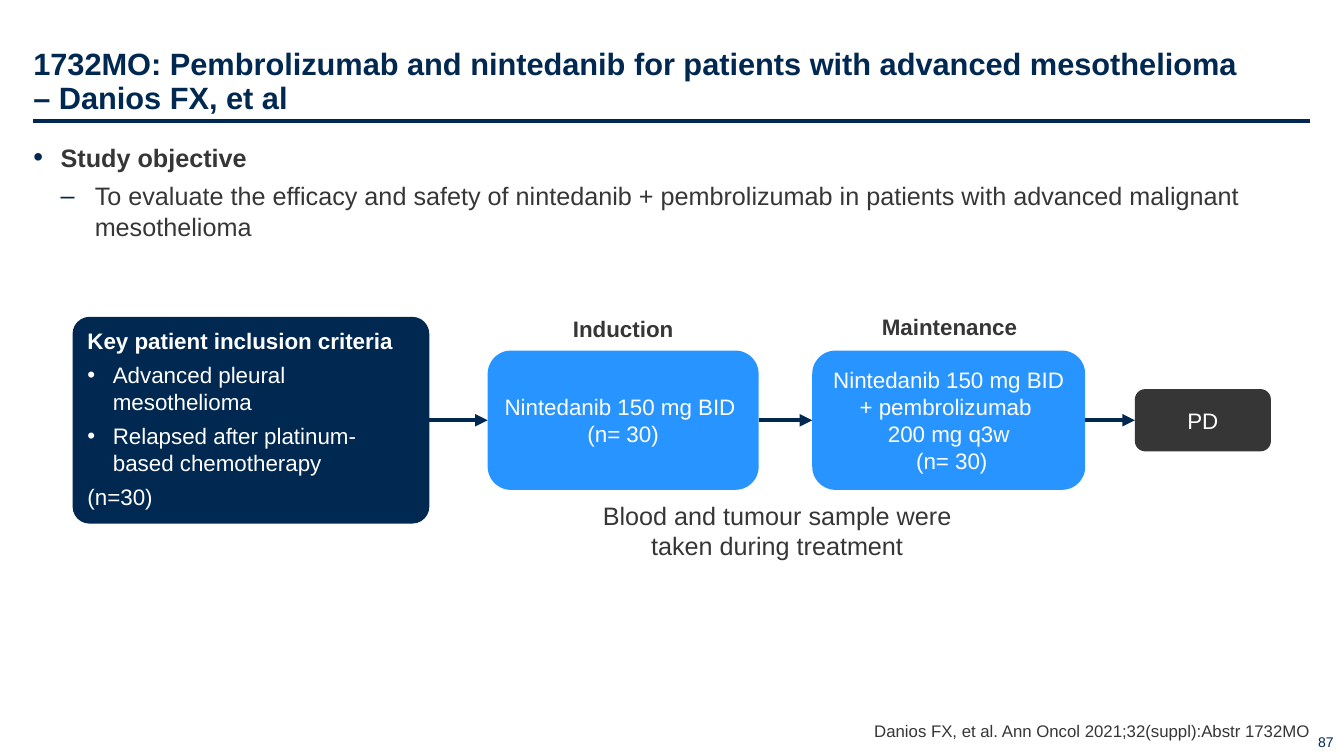
from lxml.etree import SubElement
from pptx import Presentation
from pptx.dml.color import RGBColor
from pptx.enum.shapes import MSO_CONNECTOR, MSO_SHAPE
from pptx.enum.text import MSO_ANCHOR, PP_ALIGN
from pptx.oxml.ns import qn
from pptx.util import Cm, Pt

NAVY, BLUE, GREY, WHITE = "002850", "2894FF", "363636", "FFFFFF"
FLOW_Y = 10.59
LEFT, RIGHT = 0.84, 33.02


def rgb(color):
    return RGBColor.from_string(color)


def setup_frame(tf, anchor, insets, wrap=True):
    tf.word_wrap = wrap
    tf.vertical_anchor = anchor
    left, top, right, bottom = (Cm(n) for n in insets)
    tf.margin_left, tf.margin_top = left, top
    tf.margin_right, tf.margin_bottom = right, bottom


def write_paragraph(p, text, size, color, bold=False, align=PP_ALIGN.LEFT, after=0):
    p.text = text
    p.alignment = align
    p.space_after = Pt(after)
    for r in p.runs:
        r.font.name = "Arial"
        r.font.size = Pt(size)
        r.font.bold = bold
        r.font.color.rgb = rgb(color)


def indent(p, margin, hanging, bullet=None, color=WHITE, percent=100):
    """Give a paragraph a hanging indent and, if named, a bullet."""
    pPr = p._p.get_or_add_pPr()
    pPr.set("marL", str(Cm(margin)))
    pPr.set("indent", str(-Cm(hanging)))
    if bullet:
        SubElement(SubElement(pPr, qn("a:buClr")), qn("a:srgbClr"), val=color)
        SubElement(pPr, qn("a:buSzPct"), val=str(percent * 1000))
        SubElement(pPr, qn("a:buFont"), typeface="Arial")
        SubElement(pPr, qn("a:buChar"), char=bullet)


def add_text(s, box, text, size, color, bold=False, align=PP_ALIGN.LEFT,
             anchor=MSO_ANCHOR.TOP, insets=(0.25, 0.13, 0.25, 0.13), wrap=True):
    tf = s.shapes.add_textbox(*(Cm(n) for n in box)).text_frame
    setup_frame(tf, anchor, insets, wrap)
    write_paragraph(tf.paragraphs[0], text, size, color, bold, align)
    return tf


def add_box(s, left, width, height, fill, radius=0.167):
    """Add a rounded box centred on the flow line."""
    sp = s.shapes.add_shape(MSO_SHAPE.ROUNDED_RECTANGLE, Cm(left),
                            Cm(FLOW_Y - height / 2), Cm(width), Cm(height))
    sp.adjustments[0] = radius
    sp.shadow.inherit = False
    sp.fill.solid()
    sp.fill.fore_color.rgb = rgb(fill)
    sp.line.fill.background()
    return sp


def add_step(s, left, width, height, fill, lines):
    sp = add_box(s, left, width, height, fill)
    tf = sp.text_frame
    setup_frame(tf, MSO_ANCHOR.MIDDLE, (0.25, 0, 0.25, 0))
    for i, line in enumerate(lines):
        p = tf.add_paragraph() if i else tf.paragraphs[0]
        write_paragraph(p, line, 16, WHITE, align=PP_ALIGN.CENTER)
    return sp


def add_criteria(s):
    sp = add_box(s, 1.83, 8.99, 5.21, NAVY, 0.082)
    tf = sp.text_frame
    setup_frame(tf, MSO_ANCHOR.TOP, (0.25, 0.13, 0.25, 0.13))
    write_paragraph(tf.paragraphs[0], "Key patient inclusion criteria", 16, WHITE, True, after=5.3)
    for text, hanging, bullet in (
        ("Advanced pleural mesothelioma", 0.64, "•"),
        ("Relapsed after platinum-based chemotherapy", 0.64, "•"),
        ("(n=30)", 0.81, None),
    ):
        p = tf.add_paragraph()
        write_paragraph(p, text, 16, WHITE, after=5.3)
        indent(p, hanging, hanging, bullet)
    return sp


def add_line(s, x1, y1, x2, y2, width):
    line = s.shapes.add_connector(MSO_CONNECTOR.STRAIGHT, Cm(x1), Cm(y1), Cm(x2), Cm(y2))
    line.line.color.rgb = rgb(NAVY)
    line.line.width = Pt(width)
    SubElement(line._element.spPr, qn("a:effectLst"))
    return line


def add_arrow(s, start, end):
    arrow = add_line(s, 0, FLOW_Y, 1, FLOW_Y, 3)
    arrow.begin_connect(start, 3)
    arrow.end_connect(end, 1)
    SubElement(arrow.line._get_or_add_ln(), qn("a:tailEnd"), type="triangle")


def add_objective(s):
    tf = add_text(s, (LEFT, 3.45, 32.18, 14.05), "Study objective", 18, GREY, True,
                  insets=(0, 0.13, 0, 0.13))
    heading = tf.paragraphs[0]
    heading.space_after = Pt(6)
    indent(heading, 0.69, 0.69, "•", NAVY, 110)
    p = tf.add_paragraph()
    p.level = 1
    write_paragraph(p, "To evaluate the efficacy and safety of nintedanib + pembrolizumab "
                    "in patients with advanced malignant mesothelioma", 18, GREY, after=6)
    indent(p, 1.55, 0.86, "–", NAVY)


def main():
    prs = Presentation()
    prs.slide_width, prs.slide_height = Cm(33.87), Cm(19.05)
    s = prs.slides.add_slide(prs.slide_layouts[6])

    add_line(s, LEFT, 3.05, RIGHT, 3.05, 2.25)
    title = add_text(s, (LEFT, 0.3, 32.18, 2.62),
                     "1732MO: Pembrolizumab and nintedanib for patients with advanced "
                     "mesothelioma\n– Danios FX, et al", 22, NAVY, True,
                     anchor=MSO_ANCHOR.BOTTOM, insets=(0, 0.13, 0, 0))
    title.paragraphs[0].line_spacing = 0.9
    add_objective(s)

    steps = [
        add_criteria(s),
        add_step(s, 12.29, 6.83, 3.51, BLUE, ["Nintedanib 150 mg BID ", "(n= 30)"]),
        add_step(s, 20.47, 6.88, 3.51, BLUE,
                 ["Nintedanib 150 mg BID + pembrolizumab \n200 mg q3w", " (n= 30)"]),
        add_step(s, 28.6, 3.43, 1.57, GREY, ["PD"]),
    ]
    for start, end in zip(steps, steps[1:]):
        add_arrow(s, start, end)

    for box, heading in (((14.17, 7.82, 3.07, 0.94), "Induction"),
                         ((21.95, 7.77, 3.96, 0.94), "Maintenance")):
        add_text(s, box, heading, 16, GREY, True, PP_ALIGN.CENTER, wrap=False)
    add_text(s, (14.53, 12.47, 10.11, 1.8), "Blood and tumour sample were taken during treatment",
             18, GREY, align=PP_ALIGN.CENTER)
    add_text(s, (17.73, 18.11, 15.29, 0.56),
             "Danios FX, et al. Ann Oncol 2021;32(suppl):Abstr 1732MO", 12, GREY,
             align=PP_ALIGN.RIGHT, anchor=MSO_ANCHOR.BOTTOM, insets=(0, 0, 0, 0))
    add_text(s, (32.21, 18.03, 1.65, 1.02), "87", 10, NAVY,
             align=PP_ALIGN.RIGHT, anchor=MSO_ANCHOR.BOTTOM)
    prs.save("out.pptx")


if __name__ == "__main__":
    main()
